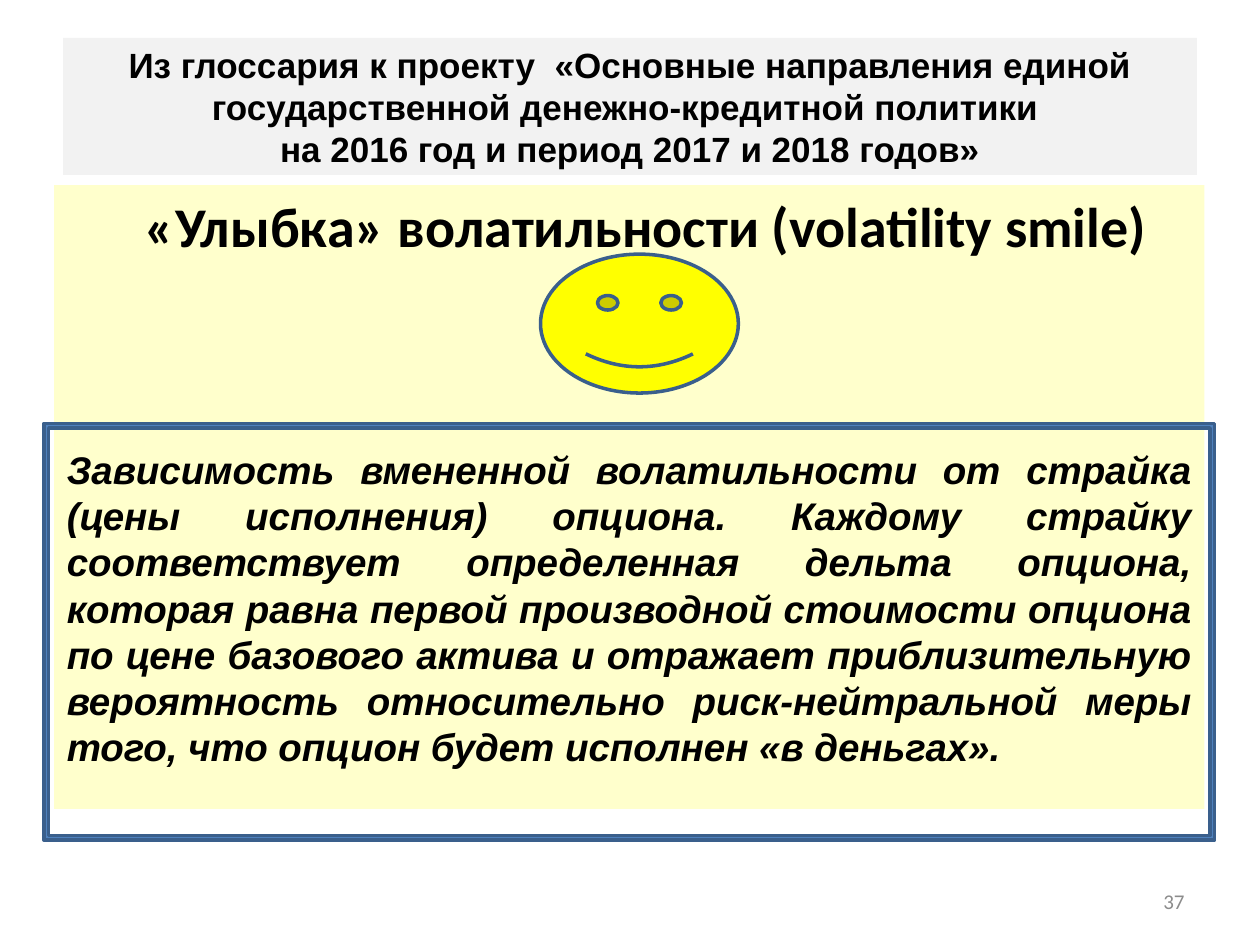
from dataclasses import dataclass

from lxml.etree import SubElement
from pptx import Presentation
from pptx.dml.color import RGBColor
from pptx.enum.shapes import MSO_SHAPE as Preset
from pptx.enum.text import MSO_ANCHOR as Anchor, MSO_AUTO_SIZE as AutoSize, PP_ALIGN as Align
from pptx.oxml.ns import qn
from pptx.util import Inches, Pt

PAGE_WIDTH, PAGE_HEIGHT = 10, 7.5


@dataclass(frozen=True)
class Theme:
    sans: str = "Arial"
    humanist: str = "Calibri"
    ink: str = "000000"
    muted: str = "8C8C8C"
    title_fill: str = "F2F2F2"
    body_fill: str = "FFFFCC"
    frame_fill: str = "4F81BD"
    smile_fill: str = "FFFF00"
    outline: str = "3A5F8C"
    title_size: int = 20
    heading_size: int = 32
    text_size: int = 22
    number_size: int = 12
    line_width: int = 2


@dataclass(frozen=True)
class Area:
    """A rectangle in shares of the page's width and height."""
    left: float
    top: float
    width: float
    height: float

    def lengths(self) -> dict:
        return {
            "left": Inches(self.left * PAGE_WIDTH),
            "top": Inches(self.top * PAGE_HEIGHT),
            "width": Inches(self.width * PAGE_WIDTH),
            "height": Inches(self.height * PAGE_HEIGHT),
        }


@dataclass(frozen=True)
class Words:
    text: str
    font: str
    size: int
    color: str = Theme.ink
    bold: bool = True
    italic: bool = False
    align: Align = Align.LEFT
    before: float = 0
    indent: float = 0


@dataclass(frozen=True)
class Figure:
    preset: Preset
    area: Area
    fill: str
    adjustment: float


THEME = Theme()
TITLE_AREA = Area(0.05, 0.04, 0.9, 0.145)
BODY_AREA = Area(0.043, 0.196, 0.913, 0.66)
NUMBER_AREA = Area(0.717, 0.927, 0.233, 0.053)

TITLE = Words(
    "Из глоссария к проекту  «Основные направления единой государственной "
    "денежно-кредитной политики \vна 2016 год и период 2017 и 2018 годов»",
    THEME.sans, THEME.title_size, align=Align.CENTER)
HEADING = Words("«Улыбка» волатильности (volatility smile)",
                THEME.humanist, THEME.heading_size, before=6.4, indent=0.62)
DEFINITION = Words(
    "Зависимость вмененной волатильности от страйка (цены исполнения) опциона. "
    "Каждому страйку соответствует определенная дельта опциона, которая равна "
    "первой производной стоимости опциона по цене базового актива и отражает "
    "приблизительную вероятность относительно риск-нейтральной меры того, "
    "что опцион будет исполнен «в деньгах».",
    THEME.sans, THEME.text_size, italic=True, align=Align.JUSTIFY, before=107)
NUMBER = Words("37", THEME.humanist, THEME.number_size, THEME.muted,
               bold=False, align=Align.RIGHT)

FIGURES = (
    Figure(Preset.FRAME, Area(0.035, 0.448, 0.929, 0.441), THEME.frame_fill, 0.011),
    Figure(Preset.SMILEY_FACE, Area(0.429, 0.269, 0.157, 0.147), THEME.smile_fill, 0.0465),
)


def set_all(target, values: dict) -> None:
    for name, value in values.items():
        setattr(target, name, value)


def paint(shape, color: str) -> None:
    shape.fill.solid()
    shape.fill.fore_color.rgb = RGBColor.from_string(color)


def write(box, area: Area, anchor: Anchor, *paragraphs: Words) -> None:
    set_all(box, area.lengths())
    frame = box.text_frame
    set_all(frame, {"word_wrap": True, "auto_size": AutoSize.NONE, "vertical_anchor": anchor})
    for index, words in enumerate(paragraphs):
        para = frame.add_paragraph() if index else frame.paragraphs[0]
        para.text = words.text
        set_all(para, {"alignment": words.align, "space_before": Pt(words.before)})
        properties = para._p.get_or_add_pPr()
        properties.set("marL", "0")
        properties.set("indent", str(Inches(words.indent)))
        SubElement(properties, qn("a:buNone"))
        for span in para.runs:
            set_all(span.font, {"name": words.font, "size": Pt(words.size),
                                "bold": words.bold, "italic": words.italic})
            span.font.color.rgb = RGBColor.from_string(words.color)


def draw(page, figure: Figure) -> None:
    shape = page.shapes.add_shape(figure.preset, **figure.area.lengths())
    shape.shadow.inherit = False
    shape.adjustments[0] = figure.adjustment
    paint(shape, figure.fill)
    shape.line.color.rgb = RGBColor.from_string(THEME.outline)
    shape.line.width = Pt(THEME.line_width)


def main() -> None:
    deck = Presentation()
    set_all(deck, {"slide_width": Inches(PAGE_WIDTH), "slide_height": Inches(PAGE_HEIGHT)})
    page = deck.slides.add_slide(deck.slide_layouts[1])

    title, body = page.shapes.title, page.placeholders[1]
    write(title, TITLE_AREA, Anchor.MIDDLE, TITLE)
    paint(title, THEME.title_fill)
    write(body, BODY_AREA, Anchor.TOP, HEADING, DEFINITION)
    paint(body, THEME.body_fill)

    for figure in FIGURES:
        draw(page, figure)

    number = page.shapes.add_textbox(**NUMBER_AREA.lengths())
    write(number, NUMBER_AREA, Anchor.MIDDLE, NUMBER)
    deck.save("out.pptx")


if __name__ == "__main__":
    main()
